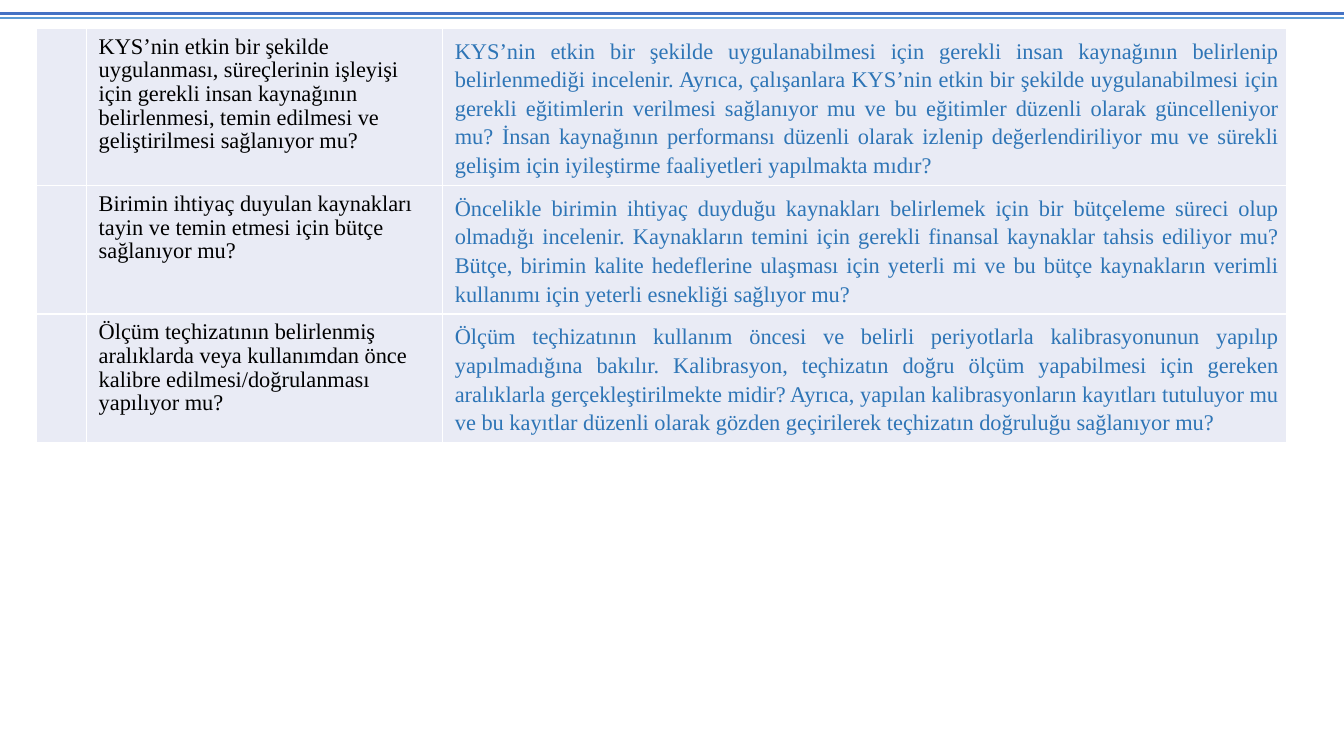
import pptx
import pptx.util
import pptx.dml.color
import pptx.enum.shapes
import pptx.enum.text
import pptx.oxml
import pptx.oxml.ns
from lxml import etree

COLORS = {
    "rule_thick": "4472C4",
    "rule_thin": "5B9BD5",
    "cell": "E9EBF5",
    "border": "FFFFFF",
    "question": "000000",
    "guidance": "2E75B6",
}

AUDIT_ITEMS = [
    (
        "KYS’nin etkin bir şekilde uygulanması, süreçlerinin işleyişi için gerekli insan kaynağının "
        "belirlenmesi, temin edilmesi ve geliştirilmesi sağlanıyor mu?",
        "KYS’nin etkin bir şekilde uygulanabilmesi için gerekli insan kaynağının belirlenip "
        "belirlenmediği incelenir. Ayrıca, çalışanlara KYS’nin etkin bir şekilde uygulanabilmesi için "
        "gerekli eğitimlerin verilmesi sağlanıyor mu ve bu eğitimler düzenli olarak güncelleniyor mu? "
        "İnsan kaynağının performansı düzenli olarak izlenip değerlendiriliyor mu ve sürekli gelişim "
        "için iyileştirme faaliyetleri yapılmakta mıdır?",
    ),
    (
        "Birimin ihtiyaç duyulan kaynakları tayin ve temin etmesi için bütçe sağlanıyor mu?",
        "Öncelikle birimin ihtiyaç duyduğu kaynakları belirlemek için bir bütçeleme süreci olup "
        "olmadığı incelenir. Kaynakların temini için gerekli finansal kaynaklar tahsis ediliyor mu? "
        "Bütçe, birimin kalite hedeflerine ulaşması için yeterli mi ve bu bütçe kaynakların verimli "
        "kullanımı için yeterli esnekliği sağlıyor mu?",
    ),
    (
        "Ölçüm teçhizatının belirlenmiş aralıklarda veya kullanımdan önce kalibre "
        "edilmesi/doğrulanması yapılıyor mu?",
        "Ölçüm teçhizatının kullanım öncesi ve belirli periyotlarla kalibrasyonunun yapılıp "
        "yapılmadığına bakılır. Kalibrasyon, teçhizatın doğru ölçüm yapabilmesi için gereken "
        "aralıklarla gerçekleştirilmekte midir? Ayrıca, yapılan kalibrasyonların kayıtları tutuluyor "
        "mu ve bu kayıtlar düzenli olarak gözden geçirilerek teçhizatın doğruluğu sağlanıyor mu?",
    ),
]


def rgb(role):
    return pptx.dml.color.RGBColor.from_string(COLORS[role])


class AuditSlide:
    font = "Times New Roman"
    size = pptx.util.Pt(16)
    inset = pptx.util.Inches(0.07)
    indent = pptx.util.Inches(0.05)

    def __init__(self, deck):
        self.width, self.height = deck.slide_width, deck.slide_height
        self.slide = deck.slides.add_slide(deck.slide_layouts[6])

    def x(self, percent):
        return round(self.width * percent / 100)

    def y(self, percent):
        return round(self.height * percent / 100)

    def rule(self, top, color, weight):
        line = self.slide.shapes.add_connector(
            pptx.enum.shapes.MSO_CONNECTOR.STRAIGHT, 0, self.y(top), self.width, self.y(top))
        line.line.color.rgb = rgb(color)
        line.line.width = pptx.util.Pt(weight)
        etree.SubElement(line._element.spPr, pptx.oxml.ns.qn("a:effectLst"))

    def table(self, left, top, columns, rows):
        table = self.slide.shapes.add_table(
            len(rows), len(columns), self.x(left), self.y(top),
            self.x(sum(columns)), self.y(sum(rows))).table
        table.first_row = False
        table.horz_banding = False
        for column, width in zip(table.columns, columns):
            column.width = self.x(width)
        for row, height in zip(table.rows, rows):
            row.height = self.y(height)
        for cell in table.iter_cells():
            cell.fill.solid()
            cell.fill.fore_color.rgb = rgb("cell")
            cell.margin_left = cell.margin_right = self.inset
            cell.margin_top = cell.margin_bottom = self.inset
            self.border(cell)
        return table

    def border(self, cell):
        properties = cell._tc.get_or_add_tcPr()
        for position, side in enumerate(("lnL", "lnR", "lnT", "lnB")):
            properties.insert(position, pptx.oxml.parse_xml(
                f'<a:{side} {pptx.oxml.ns.nsdecls("a")} w="12700"><a:solidFill>'
                f'<a:srgbClr val="{COLORS["border"]}"/></a:solidFill></a:{side}>'))

    def cell_text(self, cell, text, color, spacing, align):
        cell.text_frame.text = text
        paragraph = cell.text_frame.paragraphs[0]
        paragraph.alignment = align
        paragraph.line_spacing = spacing
        paragraph._p.get_or_add_pPr().set("marL", str(int(self.indent)))
        font = paragraph.runs[0].font
        font.name, font.size = self.font, self.size
        font.color.rgb = rgb(color)


def main():
    deck = pptx.Presentation()
    deck.slide_width = pptx.util.Inches(13.33)
    deck.slide_height = pptx.util.Inches(7.5)
    page = AuditSlide(deck)
    page.rule(2.4, "rule_thin", 1)
    page.rule(1.75, "rule_thick", 2.25)
    checklist = page.table(2.7, 3.75, [3.75, 26.5, 62.75], [20.7, 17, 17])
    align = pptx.enum.text.PP_ALIGN
    for row, (question, guidance) in enumerate(AUDIT_ITEMS):
        page.cell_text(checklist.cell(row, 1), question, "question", 0.95, align.LEFT)
        page.cell_text(checklist.cell(row, 2), guidance, "guidance", 1.15, align.JUSTIFY)
    deck.save("out.pptx")


if __name__ == "__main__":
    main()
